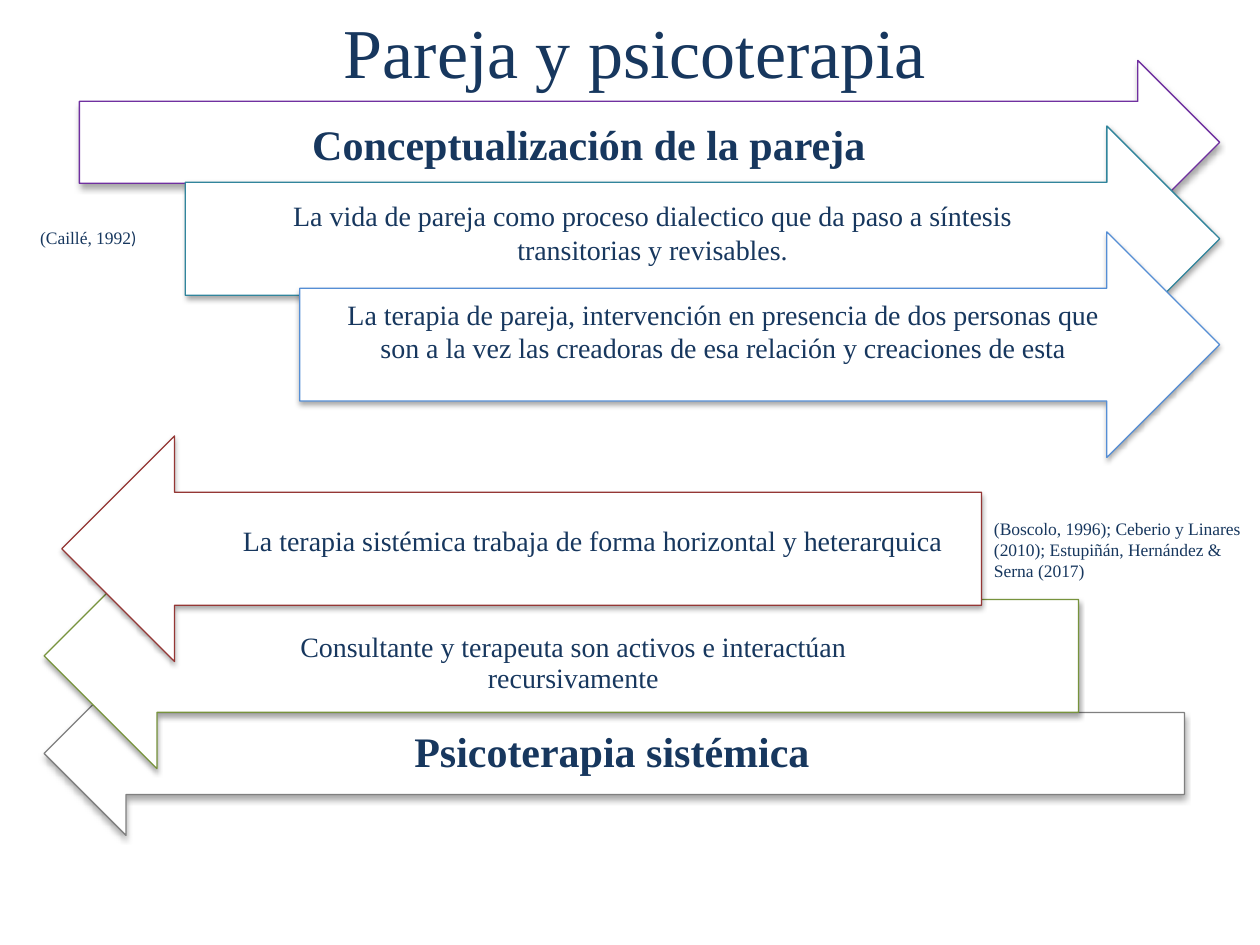
from lxml.etree import SubElement
from pptx import Presentation
from pptx.dml.color import RGBColor
from pptx.enum.shapes import MSO_SHAPE
from pptx.enum.text import MSO_ANCHOR, MSO_AUTO_SIZE, PP_ALIGN
from pptx.oxml.ns import qn
from pptx.util import Inches, Pt

NAVY = RGBColor(0x17, 0x37, 0x5E)
WHITE = RGBColor(0xFF, 0xFF, 0xFF)
PURPLE = RGBColor(0x70, 0x30, 0xA0)
TEAL = RGBColor(0x31, 0x85, 0x9C)
BLUE = RGBColor(0x55, 0x8E, 0xD5)
RED = RGBColor(0x95, 0x37, 0x35)
GREEN = RGBColor(0x77, 0x93, 0x3C)
GRAY = RGBColor(0x80, 0x80, 0x80)
SERIF = "Times New Roman"
THIN, THICK = 1.3, 1.79


def add_run(paragraph, text, size, bold=False, font=SERIF):
    run = paragraph.add_run()
    run.text = text
    run.font.name = font
    run.font.size = Pt(size)
    run.font.bold = bold
    run.font.color.rgb = NAVY


def write_text(shape, text, size=16, bold=False, align=PP_ALIGN.CENTER, wrap=True,
               anchor=MSO_ANCHOR.TOP, line_spacing=None, inset=None):
    """Format the shape's text frame and return its paragraph."""
    frame = shape.text_frame
    frame.auto_size = MSO_AUTO_SIZE.NONE
    frame.word_wrap = wrap
    frame.vertical_anchor = anchor
    if inset is not None:
        frame.margin_left = frame.margin_right = Inches(inset)
        frame.margin_top = frame.margin_bottom = Inches(inset)
    paragraph = frame.paragraphs[0]
    paragraph.alignment = align
    if line_spacing:
        paragraph.line_spacing = line_spacing
    add_run(paragraph, text, size, bold)
    return paragraph


def add_text(slide, left, top, width, height, text, **text_format):
    box = slide.shapes.add_textbox(Inches(left), Inches(top), Inches(width), Inches(height))
    return write_text(box, text, **text_format)


def add_shadow(shape):
    """Cast a soft shadow straight down, whatever the rotation of the shape."""
    shape.shadow.inherit = False
    effects = shape._element.spPr.find(qn("a:effectLst"))
    shadow = SubElement(effects, qn("a:outerShdw"), blurRad=str(Pt(3.15)),
                        dist=str(Pt(1.8)), dir="5400000", rotWithShape="0")
    color = SubElement(shadow, qn("a:srgbClr"), val="000000")
    SubElement(color, qn("a:alpha"), val="35000")


def add_arrow(slide, left, top, width, height, color, rotation=0):
    arrow = slide.shapes.add_shape(MSO_SHAPE.RIGHT_ARROW, Inches(left), Inches(top),
                                   Inches(width), Inches(height))
    arrow.rotation = rotation
    arrow.fill.solid()
    arrow.fill.fore_color.rgb = WHITE
    arrow.line.color.rgb = color
    arrow.line.width = Pt(0.75)
    add_shadow(arrow)


def place_title(slide, left, top, width, height):
    title = slide.shapes.title
    title.left, title.top = Inches(left), Inches(top)
    title.width, title.height = Inches(width), Inches(height)
    write_text(title, "Pareja y psicoterapia", size=40)


def place_couple_arrows(slide, left, top, width):
    """Stack the right-pointing arrows, which share their right edge."""
    for offset, length, height, color in (
        (0, width, THIN, PURPLE),
        (0.52, 8.21, THICK, TEAL),
        (1.36, 7.3, THICK, BLUE),
    ):
        add_arrow(slide, left + width - length, top + offset, length, height, color)
    add_text(slide, left + 1.75, top + 0.41, 4.63, 0.5, "Conceptualización de la pareja",
             size=24, bold=True, align=PP_ALIGN.LEFT, wrap=False)
    add_text(slide, left + 1.58, top + 1.05, 5.94, 0.64,
             "La vida de pareja como proceso dialectico que da paso a síntesis "
             "transitorias y revisables.")
    add_text(slide, left + 1.91, top + 1.83, 6.4, 0.64,
             "La terapia de pareja, intervención en presencia de dos personas que "
             "son a la vez las creadoras de esa relación y creaciones de esta")
    citation = add_text(slide, left - 0.41, top + 1.27, 0.98, 0.27, "(Caillé, 1992",
                        size=10, align=PP_ALIGN.LEFT, wrap=False)
    add_run(citation, ")", 10, font="Calibri")


def place_therapy_arrows(slide, left, top, width):
    """Stack the left-pointing arrows, the uppermost in front."""
    for indent, offset, length, height, color in (
        (0, 1.87, width, THIN, GRAY),
        (0, 0.85, 8.21, THICK, GREEN),
        (0.14, 0, 7.3, THICK, RED),
    ):
        add_arrow(slide, left + indent, top + offset, length, height, color, rotation=180)
    add_text(slide, left + 2.84, top + 2.25, 3.46, 0.5, "Psicoterapia sistémica",
             size=24, bold=True, align=PP_ALIGN.LEFT, wrap=False)
    add_text(slide, left + 1.61, top + 1.55, 5.18, 0.52,
             "Consultante y terapeuta son activos e interactúan recursivamente",
             anchor=MSO_ANCHOR.MIDDLE, line_spacing=0.9, inset=0.04)
    add_text(slide, left + 1.48, top + 0.65, 5.81, 0.37,
             "La terapia sistémica trabaja de forma horizontal y heterarquica",
             align=PP_ALIGN.LEFT)
    add_text(slide, left + 7.44, top + 0.6, 2.21, 0.61,
             "(Boscolo, 1996); Ceberio y Linares (2010); Estupiñán, Hernández & Serna (2017)",
             size=10, align=PP_ALIGN.LEFT)


def main():
    presentation = Presentation()
    presentation.slide_width, presentation.slide_height = Inches(10), Inches(7.5)
    slide = presentation.slides.add_slide(presentation.slide_layouts.get_by_name("Title Only"))
    place_title(slide, 2.54, 0.02, 5, 0.77)
    place_couple_arrows(slide, 0.63, 0.48, 9.05)
    place_therapy_arrows(slide, 0.35, 3.46, 9.05)
    presentation.save("out.pptx")


if __name__ == "__main__":
    main()
